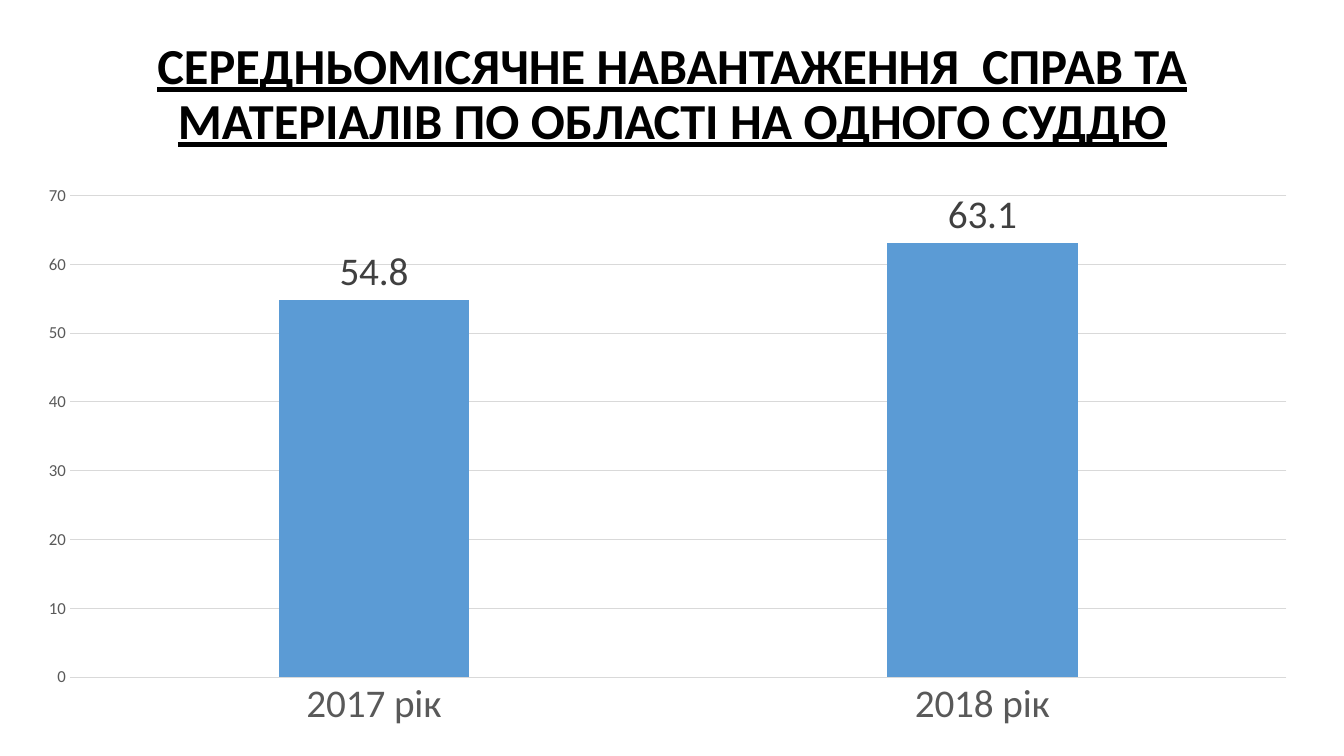
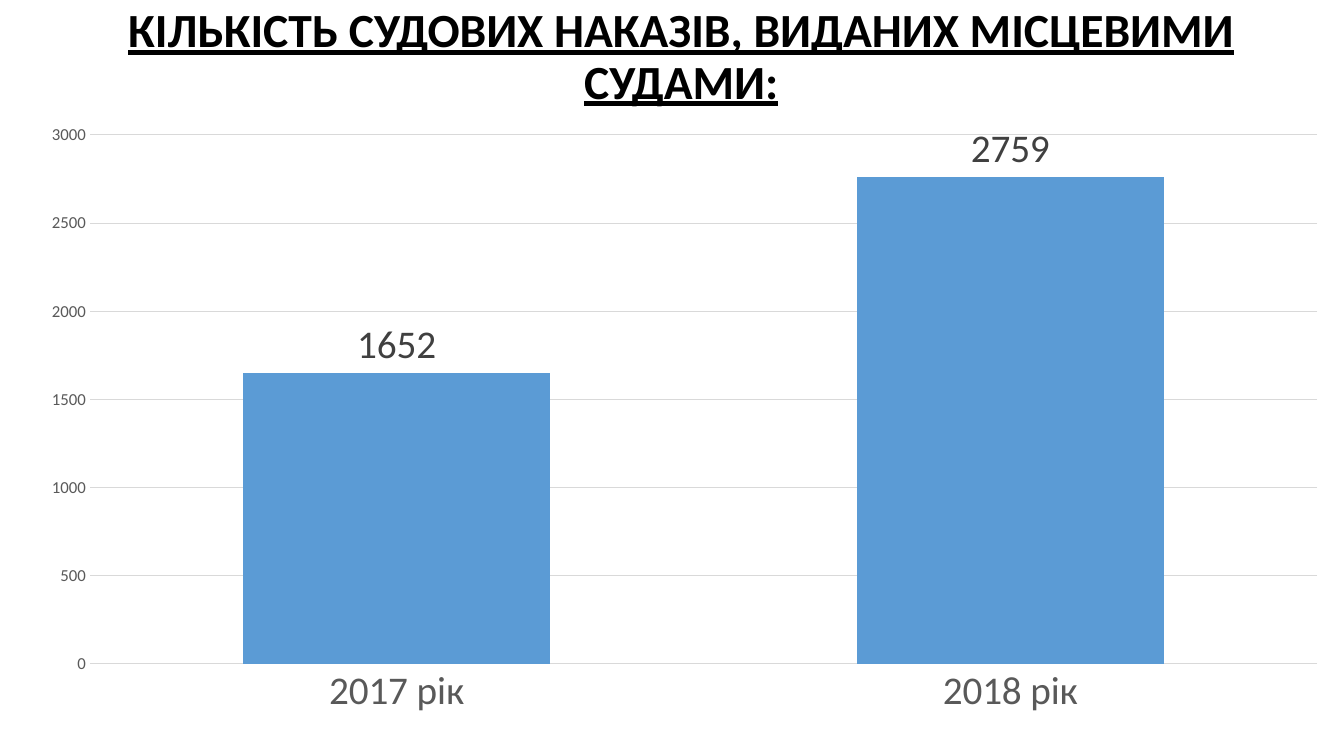
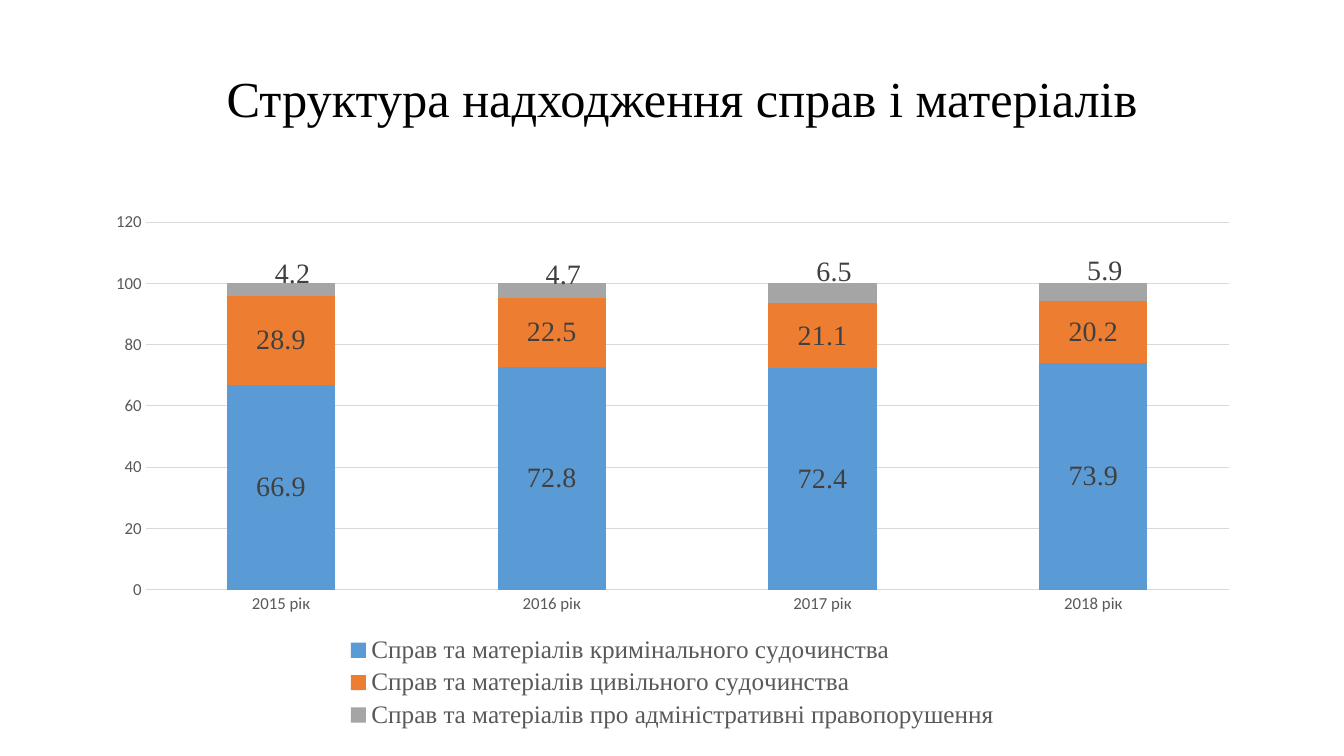
from pptx import Presentation
from pptx.chart.data import CategoryChartData
from pptx.dml.color import RGBColor
from pptx.enum.chart import XL_CHART_TYPE as ChartType
from pptx.enum.chart import XL_LABEL_POSITION as LabelPos
from pptx.enum.chart import XL_LEGEND_POSITION as LegendPos
from pptx.enum.chart import XL_TICK_MARK as TickMark
from pptx.enum.text import MSO_ANCHOR, MSO_AUTO_SIZE, PP_ALIGN
from pptx.oxml import parse_xml
from pptx.oxml.ns import nsdecls
from pptx.util import Cm, Pt

BLACK = RGBColor(0x00, 0x00, 0x00)
AXIS_GRAY = RGBColor(0x59, 0x59, 0x59)
LABEL_GRAY = RGBColor(0x40, 0x40, 0x40)
GRID_GRAY = RGBColor(0xD9, 0xD9, 0xD9)
SERIES_COLORS = [
    RGBColor(0x5B, 0x9B, 0xD5),
    RGBColor(0xED, 0x7D, 0x31),
    RGBColor(0xA5, 0xA5, 0xA5),
]
SANS, SERIF = "Calibri", "Times New Roman"

SLIDES = [
    {
        "title": "СЕРЕДНЬОМІСЯЧНЕ НАВАНТАЖЕННЯ  СПРАВ ТА МАТЕРІАЛІВ ПО ОБЛАСТІ НА ОДНОГО СУДДЮ",
        "title_box": (2.34, 1.02, 29.21, 2.79),
        "title_size": 36,
        "chart_box": (0.58, 4.39, 32.49, 14.25),
        "years": ["2017 рік", "2018 рік"],
        "series": [("Series 1", [54.8, 63.1])],
        "gap": 219,
        "maximum": 70,
    },
    {
        "title": "КІЛЬКІСТЬ СУДОВИХ НАКАЗІВ, ВИДАНИХ МІСЦЕВИМИ СУДАМИ:",
        "title_box": (0.48, 0.56, 33.38, 1.8),
        "title_size": 34,
        "chart_box": (0.64, 2.84, 33.22, 15.49),
        "years": ["2017 рік", "2018 рік"],
        "series": [("Series 1", [1652, 2759])],
        "gap": 100,
        "maximum": 3000,
    },
    {
        "title": "Структура надходження справ і матеріалів",
        "title_box": (5.46, 1.57, 23.72, 1.8),
        "title_size": 36,
        "chart_box": (2.34, 5.08, 29.21, 13.41),
        "years": ["2015 рік", "2016 рік", "2017 рік", "2018 рік"],
        "series": [
            ("Справ та матеріалів кримінального судочинства", [66.9, 72.8, 72.4, 73.9]),
            ("Справ та матеріалів цивільного судочинства", [28.9, 22.5, 21.1, 20.2]),
            ("Справ та матеріалів про адміністративні правопорушення", [4.2, 4.7, 6.5, 5.9]),
        ],
        "gap": 150,
        "maximum": 120,
        "stacked": True,
        "label_shifts": [(0.01, -0.03), (0.01, -0.03), (0.01, -0.04), (0.01, -0.04)],
    },
]


def style_font(font, size, color, face=SANS):
    font.size = Pt(size)
    font.name = face
    font.color.rgb = color


def style_line(line):
    line.color.rgb = GRID_GRAY
    line.width = Pt(0.75)


def add_title(slide, content):
    stacked = content.get("stacked", False)
    frame = slide.shapes.add_textbox(*map(Cm, content["title_box"])).text_frame
    frame.word_wrap = not stacked
    frame.auto_size = MSO_AUTO_SIZE.SHAPE_TO_FIT_TEXT if stacked else MSO_AUTO_SIZE.NONE
    frame.vertical_anchor = MSO_ANCHOR.TOP if stacked else MSO_ANCHOR.MIDDLE
    paragraph = frame.paragraphs[0]
    heading = paragraph.add_run()
    heading.text = content["title"]
    style_font(heading.font, content["title_size"], BLACK, SERIF if stacked else SANS)
    if not stacked:
        paragraph.alignment = PP_ALIGN.CENTER
        paragraph.line_spacing = 0.9
        heading.font.bold = True
        heading.font.underline = True


def style_axes(chart, maximum, stacked):
    years, values = chart.category_axis, chart.value_axis
    for axis, size in ((years, 12 if stacked else 28), (values, 12)):
        axis.major_tick_mark = axis.minor_tick_mark = TickMark.NONE
        style_font(axis.tick_labels.font, size, AXIS_GRAY)
        axis.format.line.fill.background()
    if not stacked:
        style_line(years.format.line)
    values.minimum_scale = 0
    values.maximum_scale = maximum
    values.has_major_gridlines = True
    style_line(values.major_gridlines.format.line)


def shift_labels(series, shifts, size, face):
    for index, (x, y) in enumerate(shifts):
        label = series.points[index].data_label
        style_font(label.font, size, LABEL_GRAY, face)
        entry = series._element.xpath(f"c:dLbls/c:dLbl[c:idx/@val='{index}']")[0]
        entry.insert(1, parse_xml(
            f'<c:layout {nsdecls("c")}><c:manualLayout>'
            f'<c:x val="{x}"/><c:y val="{y}"/>'
            '</c:manualLayout></c:layout>'))


def add_column_chart(slide, content):
    stacked = content.get("stacked", False)
    data = CategoryChartData()
    data.categories = content["years"]
    for name, values in content["series"]:
        data.add_series(name, values)
    kind = ChartType.COLUMN_STACKED if stacked else ChartType.COLUMN_CLUSTERED
    chart = slide.shapes.add_chart(kind, *map(Cm, content["chart_box"]), data).chart
    style_font(chart.font, 10, BLACK)
    chart.has_title = False
    chart.has_legend = stacked
    if stacked:
        chart.legend.position = LegendPos.BOTTOM
        chart.legend.include_in_layout = False
        style_font(chart.legend.font, 18, AXIS_GRAY, SERIF)
    style_axes(chart, content["maximum"], stacked)

    plot = chart.plots[0]
    plot.vary_by_categories = False
    plot.gap_width = content["gap"]
    plot.overlap = 100 if stacked else -27
    label_size, label_face = (20, SERIF) if stacked else (28, SANS)
    for series, color in zip(plot.series, SERIES_COLORS):
        series.format.fill.solid()
        series.format.fill.fore_color.rgb = color
        series.invert_if_negative = False
        labels = series.data_labels
        labels.show_value = True
        labels.position = LabelPos.CENTER if stacked else LabelPos.OUTSIDE_END
        style_font(labels.font, label_size, LABEL_GRAY, label_face)
    shift_labels(plot.series[-1], content.get("label_shifts", []), label_size, label_face)


def main():
    deck = Presentation()
    deck.slide_width, deck.slide_height = Cm(33.87), Cm(19.05)
    for content in SLIDES:
        slide = deck.slides.add_slide(deck.slide_layouts[6])
        add_title(slide, content)
        add_column_chart(slide, content)
    deck.save("out.pptx")


if __name__ == "__main__":
    main()
